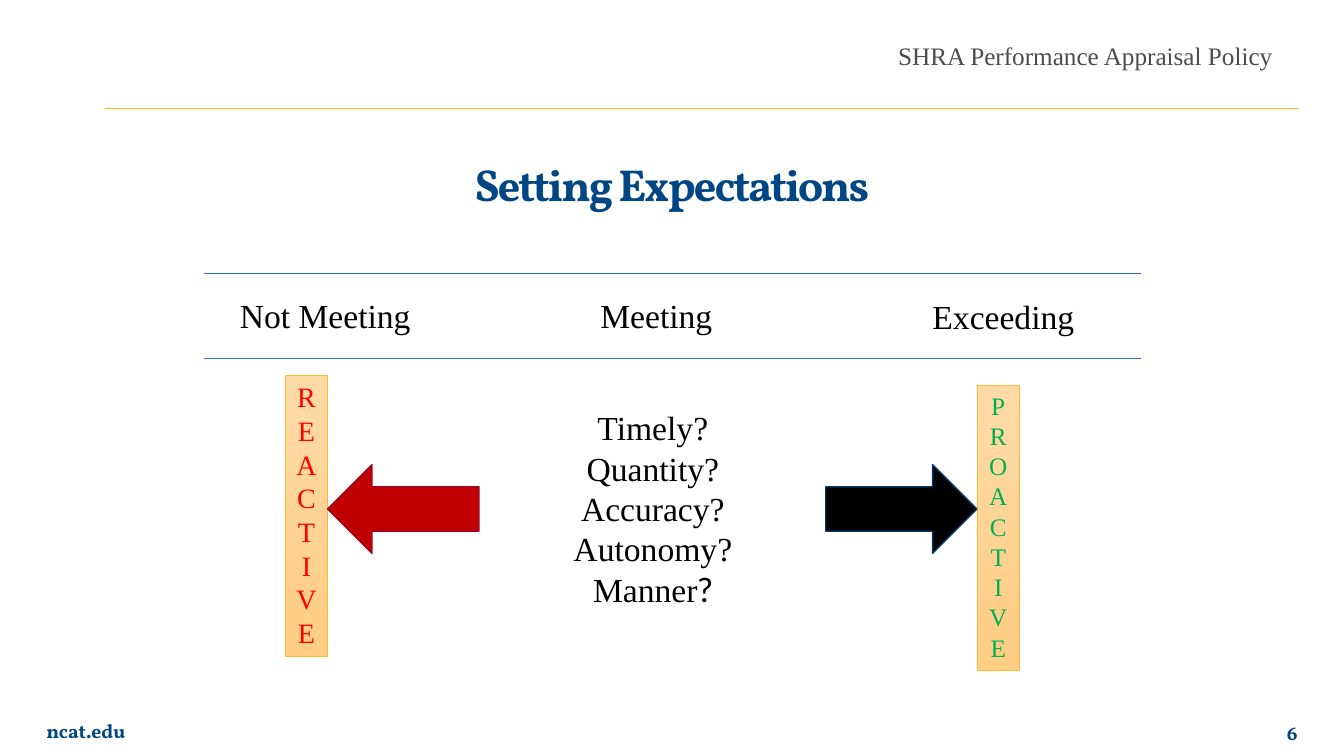
from lxml import etree
from pptx import Presentation
from pptx.dml.color import RGBColor
from pptx.enum.shapes import MSO_CONNECTOR, MSO_SHAPE
from pptx.enum.text import MSO_ANCHOR, MSO_AUTO_SIZE, PP_ALIGN
from pptx.oxml.ns import qn
from pptx.util import Emu, Pt

PX = 9144  # 100 px to the inch
COLORS = {
    "navy": "004684", "gold": "FDB927", "rule": "3366FF", "black": "000000",
    "gray": "4C4C4C", "red": "FF0000", "green": "00B050",
    "bar_top": "FFDAA6", "bar_bottom": "FFCD84", "bar_edge": "FDB931",
    "left_arrow": "C00000", "left_edge": "A50021", "right_edge": "003462",
}
RGB = {name: RGBColor.from_string(value) for name, value in COLORS.items()}
SERIF, BRAND = "Times New Roman", "Vollkorn"
LEFT, CENTER, RIGHT = PP_ALIGN.LEFT, PP_ALIGN.CENTER, PP_ALIGN.RIGHT


def box(*lengths):
    return [Emu(length * PX) for length in lengths]


def write(shape, text, size, color, align=LEFT, font=SERIF, anchor=MSO_ANCHOR.TOP):
    frame = shape.text_frame
    frame.text = text
    frame.word_wrap = True
    frame.auto_size = MSO_AUTO_SIZE.NONE
    frame.vertical_anchor = anchor
    for paragraph in frame.paragraphs:
        paragraph.alignment = align
        for run in paragraph.runs:
            run.font.size = Pt(size)
            run.font.name = font
            run.font.bold = font == BRAND
            run.font.color.rgb = RGB[color]
    return frame


prs = Presentation()
prs.slide_width, prs.slide_height = box(1333, 750)
slide = prs.slides.add_slide(prs.slide_layouts[5])
shapes = slide.shapes

# Title
title = shapes.title
title.left, title.top, title.width, title.height = box(104, 155, 1125, 62)
heading = write(title, "Setting Expectations", 32, "navy", CENTER, BRAND,
                MSO_ANCHOR.MIDDLE).paragraphs[0]
heading.line_spacing = 0.9
heading.runs[0].font._element.set("spc", "-150")

# Header rule and the two rules around the ratings
for x1, x2, y, color in [(104, 1288, 108, "gold"),
                         (202, 1132, 271, "rule"),
                         (202, 1132, 356, "rule")]:
    rule = shapes.add_connector(MSO_CONNECTOR.STRAIGHT, *box(x1, y, x2, y))
    rule.line.color.rgb = RGB[color]
    rule.line.width = Pt(0.5)
    etree.SubElement(rule._element.spPr, qn("a:effectLst"))

# Policy name
policy = shapes.add_textbox(*box(881, 35, 395, 40))
write(policy, "SHRA Performance Appraisal Policy", 18, "gray").word_wrap = False

# Footer
for text, place, align, right_inset in [
        ("ncat.edu", (46, 705, 104, 40), LEFT, 10),
        ("6", (1234, 710, 53, 33), RIGHT, 0)]:
    footer = write(shapes.add_textbox(*box(*place)), text, 14, "navy", align,
                   BRAND, MSO_ANCHOR.MIDDLE)
    footer.margin_left, footer.margin_right = box(0, right_inset)

# Ratings
for rating, x, y, align in [("Not Meeting", 228, 288, LEFT),
                            ("Meeting", 547, 288, CENTER),
                            ("Exceeding", 915, 289, LEFT)]:
    write(shapes.add_textbox(*box(x, y, 208, 51)), rating, 24, "black", align)

# Questions for the middle rating
questions = write(shapes.add_textbox(*box(539, 399, 217, 212)),
                  "Timely?\nQuantity?\nAccuracy?\nAutonomy?\nManner", 24, "black", CENTER)
last_mark = questions.paragraphs[-1].add_run()
last_mark.text = "?"
last_mark.font.size = Pt(24)
last_mark.font.name = "Lato"
last_mark.font.color.rgb = RGB["black"]

# Vertical word bars
for word, place, size, color in [
        ("\n".join("REACTIVE"), (283, 372, 42, 279), 20, "red"),
        ("PROACTIVE", (969, 382, 42, 283), 18, "green")]:
    bar = shapes.add_shape(MSO_SHAPE.RECTANGLE, *box(*place))
    bar.shadow.inherit = False
    bar.fill.gradient()
    bar.fill.gradient_angle = 270
    for stop, shade, position in zip(bar.fill.gradient_stops,
                                     ("bar_top", "bar_bottom"), (0, 1)):
        stop.color.rgb = RGB[shade]
        stop.position = position
    bar.line.color.rgb = RGB["bar_edge"]
    bar.line.width = Pt(0.5)
    write(bar, word, size, color, CENTER)

# Arrows from the middle to each bar
for kind, x, fill, edge in [(MSO_SHAPE.LEFT_ARROW, 325, "left_arrow", "left_edge"),
                            (MSO_SHAPE.RIGHT_ARROW, 819, "black", "right_edge")]:
    arrow = shapes.add_shape(kind, *box(x, 461, 150, 88))
    arrow.shadow.inherit = False
    arrow.fill.solid()
    arrow.fill.fore_color.rgb = RGB[fill]
    arrow.line.color.rgb = RGB[edge]
    arrow.line.width = Pt(1)

prs.save("out.pptx")
